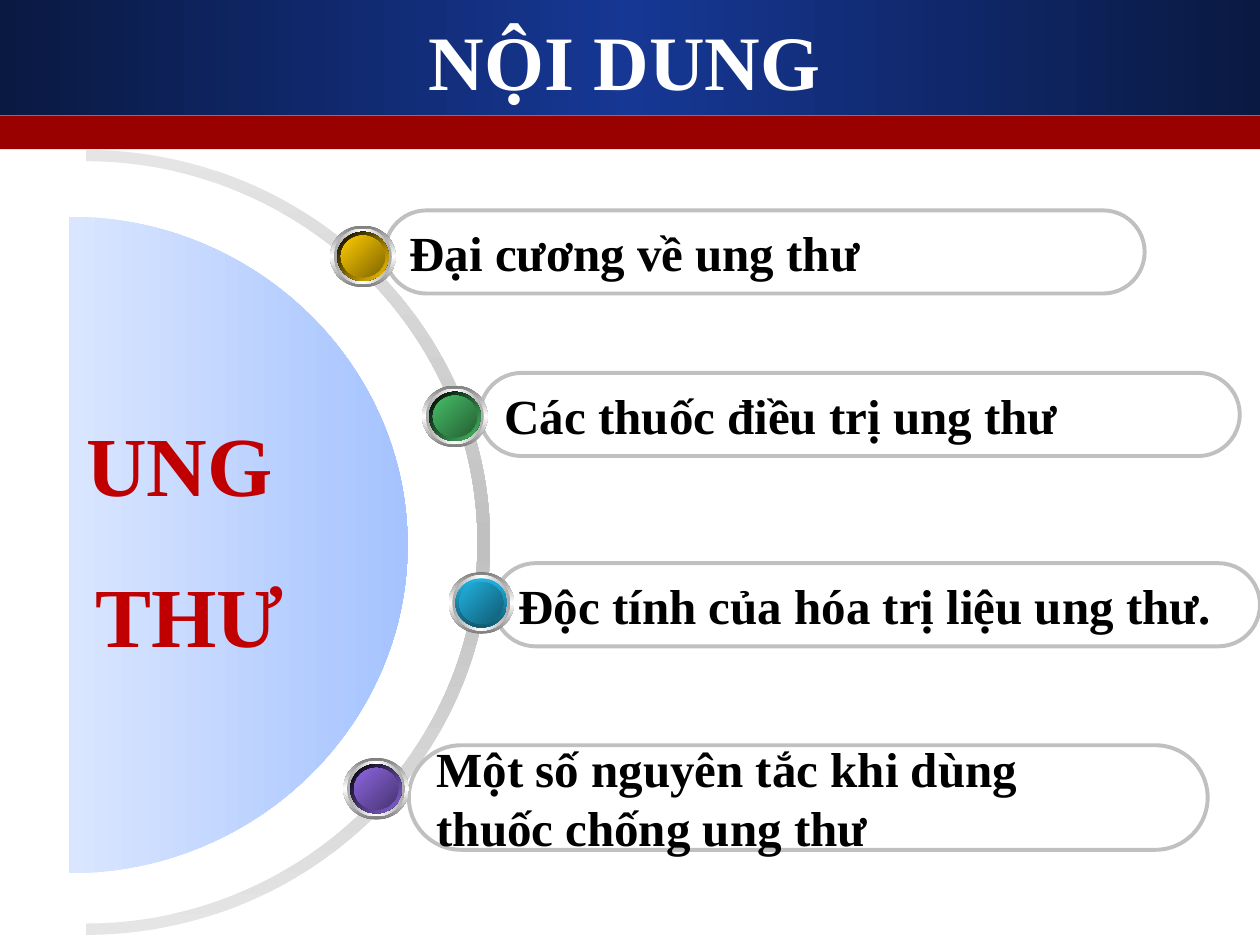
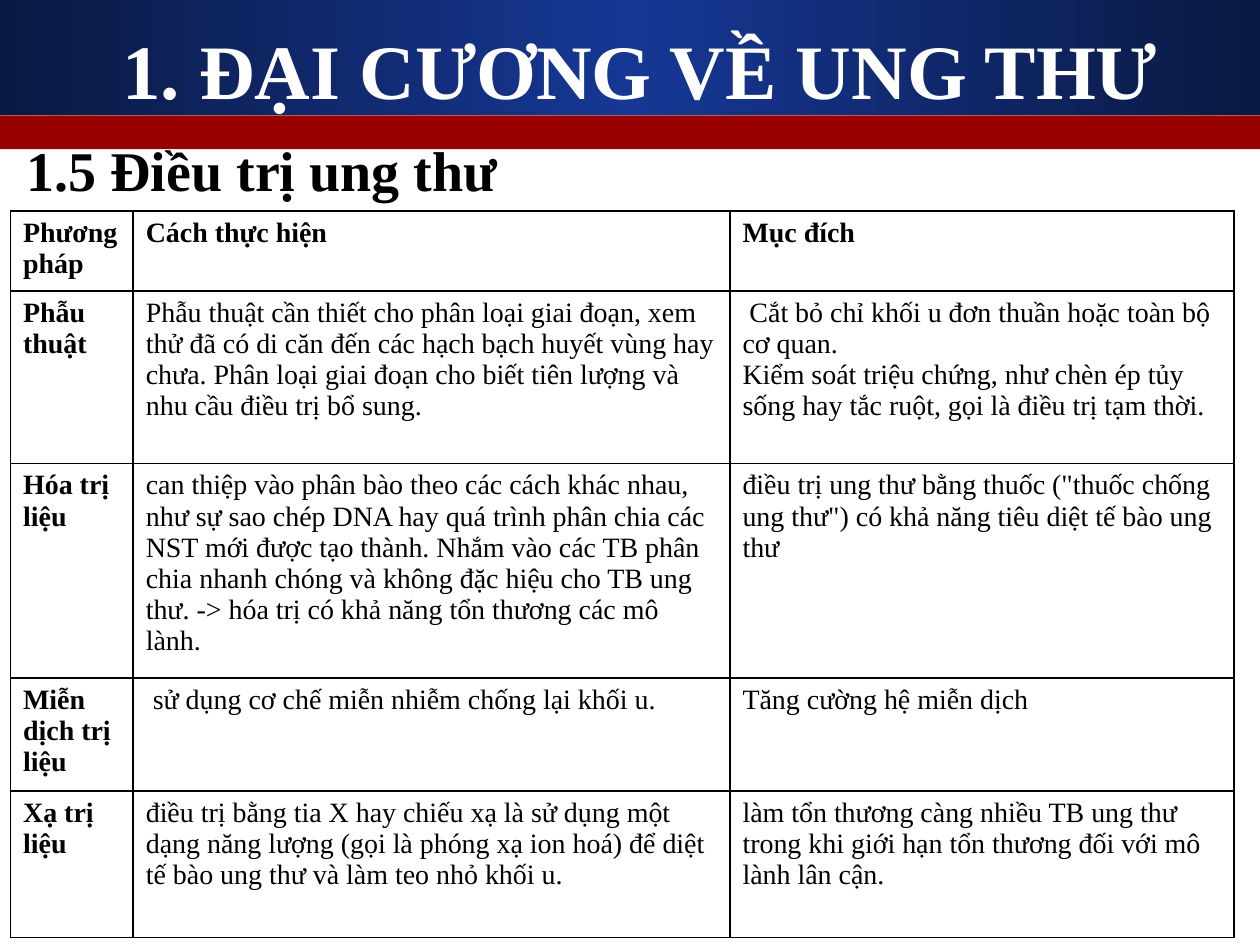
from lxml.etree import SubElement
from pptx import Presentation
from pptx.dml.color import RGBColor
from pptx.enum.shapes import MSO_SHAPE as Shape
from pptx.enum.text import MSO_ANCHOR as Anchor, MSO_AUTO_SIZE as AutoSize, PP_ALIGN as Align
from pptx.oxml.ns import qn
from pptx.util import Inches, Pt

# The slide is a grid of 100 columns by 75 rows
SLIDE_W, SLIDE_H = Inches(10), Inches(7.5)
COLUMN, ROW = SLIDE_W // 100, SLIDE_H // 75

FONT = "Times New Roman"
WHITE, BLACK, SILVER = "FFFFFF", "000000", "C0C0C0"
NAVY, BLUE, BAND_RED, TOPIC_RED = "0A1942", "163794", "990000", "C00000"

# Left, top, width, height of the pill; left, top of its button; then the
# button's colour, its shade, and the colours and angle of its inner rim
CONTENTS = [
    (["Đại cương về ung thư"], (30.55, 16.7, 60.3, 6.6), (26.2, 17.9),
     "FFCC00", "806600", (BLACK, "FFCC00"), 45),
    (["Các thuốc điều trị ung thư"], (38.1, 29.6, 60.3, 6.6), (33.5, 30.6),
     "48BE67", "246034", (BLACK, "48BE67"), 45),
    (["Độc tính của hóa trị liệu ung thư."], (39.2, 44.7, 60.8, 6.6), (35.6, 45.4),
     "21B3E1", "115A71", ("21B3E1", "115A71"), 90),
    (["Một số nguyên tắc khi dùng", "thuốc chống ung thư"], (32.45, 59.15, 63.4, 8.3),
     (27.25, 60.15), "8D67E1", "473471", (BLACK, "8D67E1"), 45),
]

TREATMENT_COLUMNS = [9.74, 47.36, 40]
TREATMENT_ROWS = [6.35, 13.7, 17, 9, 11.6]
TREATMENTS = [
    [["Phương pháp"], ["Cách thực hiện"], ["Mục đích"]],
    [["Phẫu thuật"],
     ["Phẫu thuật cần thiết cho phân loại giai đoạn, xem thử đã có di căn đến các hạch "
      "bạch huyết vùng hay chưa. Phân loại giai đoạn cho biết tiên lượng và nhu cầu "
      "điều trị bổ sung."],
     [" Cắt bỏ chỉ khối u đơn thuần hoặc toàn bộ cơ quan.",
      "Kiểm soát triệu chứng, như chèn ép tủy sống hay tắc ruột, gọi là điều trị tạm thời."]],
    [["Hóa trị liệu"],
     ["can thiệp vào phân bào theo các cách khác nhau, như sự sao chép DNA hay quá trình "
      "phân chia các NST mới được tạo thành. Nhắm vào các TB phân chia nhanh chóng và "
      "không đặc hiệu cho TB ung thư. -> hóa trị có khả năng tổn thương các mô lành."],
     ["điều trị ung thư bằng thuốc (\"thuốc chống ung thư\") có khả năng tiêu diệt tế bào "
      "ung thư"]],
    [["Miễn dịch trị liệu"],
     [" sử dụng cơ chế miễn nhiễm chống lại khối u."],
     ["Tăng cường hệ miễn dịch"]],
    [["Xạ trị liệu"],
     ["điều trị bằng tia X hay chiếu xạ là sử dụng một dạng năng lượng (gọi là phóng xạ "
      "ion hoá) để diệt tế bào ung thư và làm teo nhỏ khối u."],
     ["làm tổn thương càng nhiều TB ung thư trong khi giới hạn tổn thương đối với mô lành "
      "lân cận."]],
]


def color(hex_code):
    return RGBColor.from_string(hex_code)


def cells(left, top, width, height):
    """Turn grid columns and rows into lengths."""
    return int(left * COLUMN), int(top * ROW), int(width * COLUMN), int(height * ROW)


def paint(shape, colors, angle=0):
    """Fill with one colour, or with evenly spaced gradient stops."""
    shape.shadow.inherit = False
    shape.line.fill.background()
    if len(colors) == 1:
        shape.fill.solid()
        shape.fill.fore_color.rgb = color(colors[0])
        return
    shape.fill.gradient()
    gradient = shape._element.spPr.find(qn("a:gradFill"))
    stops = gradient.find(qn("a:gsLst"))
    for stop in list(stops):
        stops.remove(stop)
    for index, hex_code in enumerate(colors):
        position = 100000 * index // (len(colors) - 1)
        stop = SubElement(stops, qn("a:gs"), pos=str(position))
        SubElement(stop, qn("a:srgbClr"), val=hex_code)
    gradient.find(qn("a:lin")).set("ang", str(angle * 60000))


def write(frame, lines, size, hex_code=BLACK, bold=True, align=Align.LEFT, spacing=None):
    frame.word_wrap = True
    for index, line in enumerate(lines):
        paragraph = frame.paragraphs[0] if index == 0 else frame.add_paragraph()
        paragraph.alignment = align
        if spacing:
            paragraph.line_spacing = spacing
        run = paragraph.add_run()
        run.text = line
        run.font.name, run.font.size, run.font.bold = FONT, Pt(size), bold
        run.font.color.rgb = color(hex_code)


def add_painted(slide, preset, box, colors, angle=0):
    shape = slide.shapes.add_shape(preset, *cells(*box))
    paint(shape, colors, angle)
    return shape


def put_bands_on_layout(layout, slide):
    """Draw the header bands once, behind everything on the shared layout."""
    for box, colors in [((0, 9.16, 100, 2.68), [BAND_RED]),
                        ((0, 0, 100, 9.12), [NAVY, BLUE, NAVY])]:
        band = add_painted(slide, Shape.RECTANGLE, box, colors)
        layout.shapes._spTree.insert(2, band._element)


def set_title(slide, text, box):
    title = slide.shapes.title
    title.left, title.top, title.width, title.height = cells(*box)
    frame = title.text_frame
    frame.vertical_anchor, frame.auto_size = Anchor.MIDDLE, AutoSize.NONE
    write(frame, [text], 44, WHITE, align=Align.CENTER)


def half_ellipse(center, radii):
    """Nodes and handles of two quarter curves, from top round the right to bottom."""
    handle = 0.55
    steps = [(0, -1), (handle, -1), (1, -handle), (1, 0), (1, handle), (handle, 1), (0, 1)]
    return [((center[0] + radii[0] * x) * COLUMN, (center[1] + radii[1] * y) * ROW)
            for x, y in steps]


def add_curved_outline(slide, arcs, colors, angle):
    """Join half ellipses by straight lines into one closed outline."""
    points = [point for arc in arcs for point in arc]
    builder = slide.shapes.build_freeform(*points[0], scale=1.0)
    builder.add_line_segments(points[1:], close=True)
    outline = builder.convert_to_shape()
    nodes = list(outline._element.spPr.iter(qn("a:moveTo"), qn("a:lnTo")))
    for start in range(0, len(nodes), len(arcs[0])):
        for first in (start + 1, start + 4):
            curve = SubElement(nodes[first].getparent(), qn("a:cubicBezTo"))
            nodes[first].addprevious(curve)
            for node in nodes[first:first + 3]:
                curve.append(node[0])
                node.getparent().remove(node)
    paint(outline, colors, angle)


def add_pill(slide, lines, box):
    pill = slide.shapes.add_shape(Shape.ROUNDED_RECTANGLE, *cells(*box))
    pill.adjustments[0] = 0.5
    pill.shadow.inherit = False
    pill.fill.background()
    pill.line.color.rgb, pill.line.width = color(SILVER), Pt(2.25)
    pill.text_frame.vertical_anchor = Anchor.MIDDLE
    write(pill.text_frame, lines, 28)


def add_button(slide, corner, hue, shade, rim, rim_angle):
    """Four concentric ellipses: metal edge, metal ring, rim and face."""
    outer_w, outer_h = 5.2, 4.9
    rings = [(5.2, 4.9, ("7D7D7D", WHITE, "7D7D7D"), 90),
             (4.6, 4.4, ("A8A8A8", WHITE, "A8A8A8"), 0),
             (4.1, 3.9, rim, rim_angle),
             (3.5, 3.3, (hue, shade), 45)]
    for width, height, colors, angle in rings:
        left = corner[0] + (outer_w - width) / 2
        top = corner[1] + (outer_h - height) / 2
        add_painted(slide, Shape.OVAL, (left, top, width, height), colors, angle)


def add_text(slide, box, lines, size, **style):
    text_box = slide.shapes.add_textbox(*cells(*box))
    write(text_box.text_frame, lines, size, **style)
    return text_box.text_frame


def border(cell):
    properties = cell._tc.get_or_add_tcPr()
    for index, side in enumerate(("a:lnL", "a:lnR", "a:lnT", "a:lnB")):
        line = SubElement(properties, qn(side), w=str(Pt(1)))
        fill = SubElement(line, qn("a:solidFill"))
        SubElement(fill, qn("a:srgbClr"), val=BLACK)
        properties.insert(index, line)


def add_treatment_table(slide):
    box = (0.84, 16.75, sum(TREATMENT_COLUMNS), sum(TREATMENT_ROWS))
    table = slide.shapes.add_table(len(TREATMENTS), len(TREATMENTS[0]), *cells(*box)).table
    table.first_row = table.horz_banding = False
    for column, width in zip(table.columns, TREATMENT_COLUMNS):
        column.width = int(width * COLUMN)
    for row, height in zip(table.rows, TREATMENT_ROWS):
        row.height = int(height * ROW)
    for r, treatment in enumerate(TREATMENTS):
        for c, lines in enumerate(treatment):
            cell = table.cell(r, c)
            cell.fill.background()
            border(cell)
            write(cell.text_frame, lines, 16, bold=r == 0 or c == 0)


def build_contents(slide):
    set_title(slide, "NỘI DUNG", (3.33, 1.62, 92.5, 6.2))

    # Ring and half disc of the topic
    ring_center = (6.8, 43.05)
    outer = half_ellipse(ring_center, (32.1, 31.15))
    inner = half_ellipse(ring_center, (31.1, 30.25))
    add_curved_outline(slide, [outer, inner[::-1]], ("E5E5E5", SILVER, "E5E5E5"), 90)
    disc = half_ellipse((5.5, 43.25), (26.85, 26.05))
    add_curved_outline(slide, [disc], ("DAE6FF", "A5C3FF"), 0)

    # Entries along the ring
    for lines, pill, *_ in CONTENTS:
        add_pill(slide, lines, pill)
    for _, _, *button in CONTENTS:
        add_button(slide, *button)

    topic = add_text(slide, (-7.53, 28.95, 45.2, 23.6), ["UNG ", "THƯ"], 48,
                     hex_code=TOPIC_RED, align=Align.CENTER, spacing=1.5)
    topic.vertical_anchor = Anchor.MIDDLE


def build_treatments(slide):
    set_title(slide, "1. ĐẠI CƯƠNG VỀ UNG THƯ", (8.33, 0.08, 85, 10.8))
    heading = add_text(slide, (0, 10.3, 100, 6.4), ["1.5 Điều trị ung thư"], 32)
    heading.margin_left = int(2.1 * COLUMN)
    add_treatment_table(slide)


def main():
    deck = Presentation()
    deck.slide_width, deck.slide_height = SLIDE_W, SLIDE_H
    title_only = deck.slide_layouts[5]
    contents, treatments = (deck.slides.add_slide(title_only) for _ in range(2))
    put_bands_on_layout(title_only, contents)
    build_contents(contents)
    build_treatments(treatments)
    deck.save("out.pptx")


if __name__ == "__main__":
    main()
